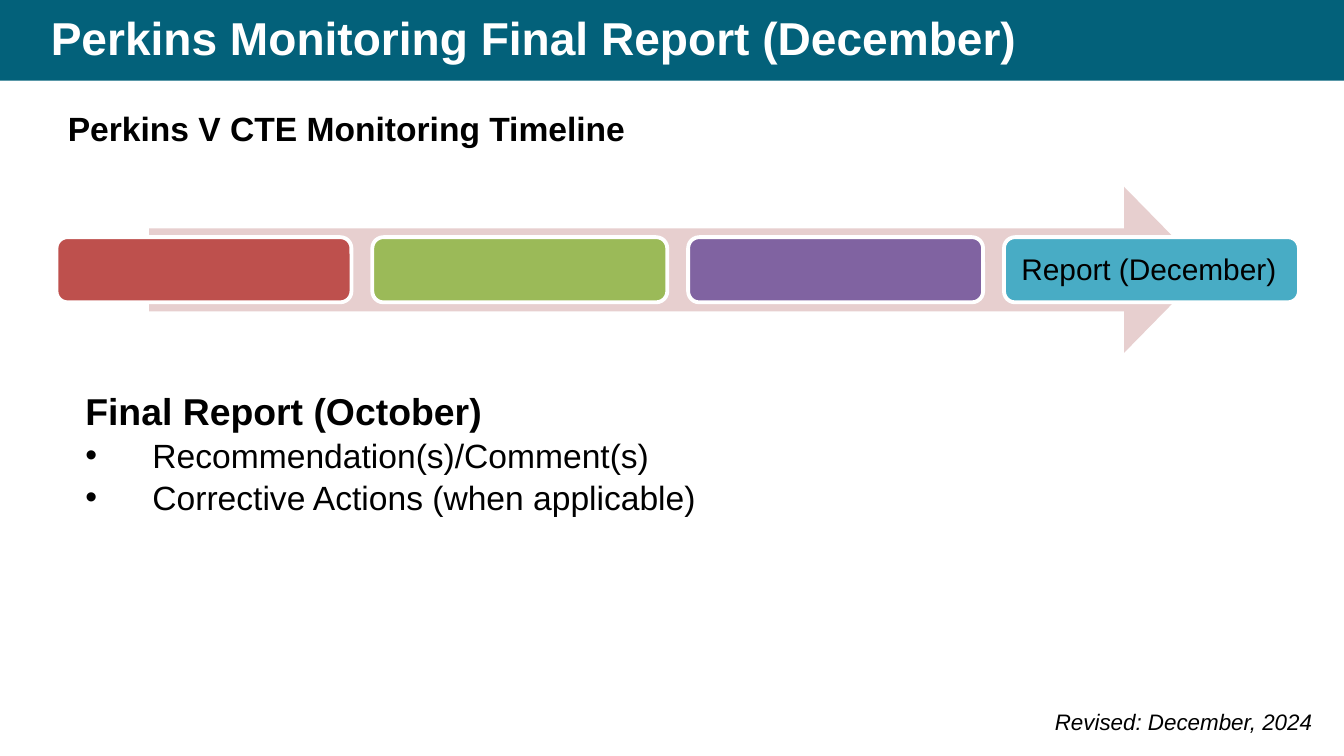
import dataclasses

import lxml.etree
import pptx
import pptx.dml.color
import pptx.enum.shapes
import pptx.enum.text
import pptx.oxml.ns
import pptx.util

RGB = pptx.dml.color.RGBColor
KIND = pptx.enum.shapes.MSO_SHAPE
ANCHOR = pptx.enum.text.MSO_ANCHOR

SCALE = 4572  # EMU in one px, 200 px to the inch
FONT = "Arial"

WHITE = RGB(0xFF, 0xFF, 0xFF)
BLACK = RGB(0x00, 0x00, 0x00)
TEAL = RGB(0x03, 0x61, 0x7A)
PINK = RGB(0xE7, 0xCF, 0xCF)
RED = RGB(0xBE, 0x50, 0x4D)
GREEN = RGB(0x9B, 0xBA, 0x58)
PURPLE = RGB(0x80, 0x63, 0xA1)
BLUE = RGB(0x48, 0xAC, 0xC5)

STEPS = (RED, GREEN, PURPLE, BLUE)
STEP_LEFT, STEP_PITCH = 84, 470


@dataclasses.dataclass(frozen=True)
class Box:
    left: int
    top: int
    width: int
    height: int

    def emu(self) -> tuple[int, ...]:
        return tuple(px(n) for n in dataclasses.astuple(self))


@dataclasses.dataclass(frozen=True)
class Line:
    text: str
    size: float
    bold: bool = False
    italic: bool = False
    bullet: bool = False


def px(count: int) -> int:
    return count * SCALE


def add_block(slide, kind, box: Box, fill: RGB, adjust=(), edge=None):
    shape = slide.shapes.add_shape(kind, *box.emu())
    shape.shadow.inherit = False
    shape.fill.solid()
    shape.fill.fore_color.rgb = fill
    for i, value in enumerate(adjust):
        shape.adjustments[i] = value
    if edge is None:
        shape.line.fill.background()
    else:
        shape.line.color.rgb = edge
        shape.line.width = pptx.util.Pt(2.04)
    return shape


def add_bullet(props) -> None:
    for tag, key, value in (("a:buFont", "typeface", FONT),
                            ("a:buChar", "char", "•")):
        mark = lxml.etree.SubElement(props, pptx.oxml.ns.qn(tag))
        mark.set(key, value)


def add_text(slide, box: Box, *lines: Line, color=BLACK, inset=(0, 2),
             margin=0, hang=0, before=0, spacing=None, anchor=ANCHOR.TOP):
    """Inset is (sides, top); the bottom inset is zero when the sides are."""
    frame = slide.shapes.add_textbox(*box.emu()).text_frame
    frame.word_wrap = True
    frame.vertical_anchor = anchor
    side, top = inset
    frame.margin_left = frame.margin_right = px(side)
    frame.margin_top = px(top)
    frame.margin_bottom = px(top if side else 0)
    for i, line in enumerate(lines):
        para = frame.add_paragraph() if i else frame.paragraphs[0]
        para.space_before = pptx.util.Pt(before)
        if spacing:
            para.line_spacing = spacing
        props = para._p.get_or_add_pPr()
        props.set("marL", str(px(margin)))
        props.set("indent", str(px(-hang)))
        if line.bullet:
            para.level = 3
            add_bullet(props)
        run = para.add_run()
        run.text = line.text
        font = run.font
        font.name, font.size = FONT, pptx.util.Pt(line.size)
        font.bold, font.italic = line.bold, line.italic
        font.color.rgb = color


def add_steps(slide) -> None:
    add_block(slide, KIND.RIGHT_ARROW, Box(222, 278, 1572, 247), PINK,
              adjust=(0.5, 0.49))
    for i, fill in enumerate(STEPS):
        box = Box(STEP_LEFT + i * STEP_PITCH, 353, 439, 97)
        add_block(slide, KIND.ROUNDED_RECTANGLE, box, fill,
                  adjust=(0.17,), edge=WHITE)
    add_text(slide, Box(1518, 371, 390, 56), Line("Report (December)", 16),
             margin=2, before=1)


def main() -> None:
    deck = pptx.Presentation()
    deck.slide_width, deck.slide_height = px(2000), px(1125)
    slide = deck.slides.add_slide(deck.slide_layouts[6])

    add_block(slide, KIND.RECTANGLE, Box(0, 0, 2000, 120), TEAL)
    add_text(slide, Box(56, 0, 1848, 120),
             Line("Perkins Monitoring Final Report (December)", 24.7, bold=True),
             color=WHITE, inset=(20, 10), spacing=0.9, anchor=ANCHOR.MIDDLE)
    add_text(slide, Box(99, 159, 850, 66),
             Line("Perkins V CTE Monitoring Timeline", 18, bold=True),
             margin=2, before=1)
    add_steps(slide)
    add_text(slide, Box(125, 576, 1780, 196),
             Line("Final Report (October)", 20, bold=True),
             Line("Recommendation(s)/Comment(s)", 18, bullet=True),
             Line("Corrective Actions (when applicable)", 18, bullet=True),
             margin=102, hang=100, before=0.9)
    add_text(slide, Box(1550, 1044, 450, 60),
             Line("Revised: December, 2024", 12, italic=True), inset=(20, 10))
    deck.save("out.pptx")


if __name__ == "__main__":
    main()
